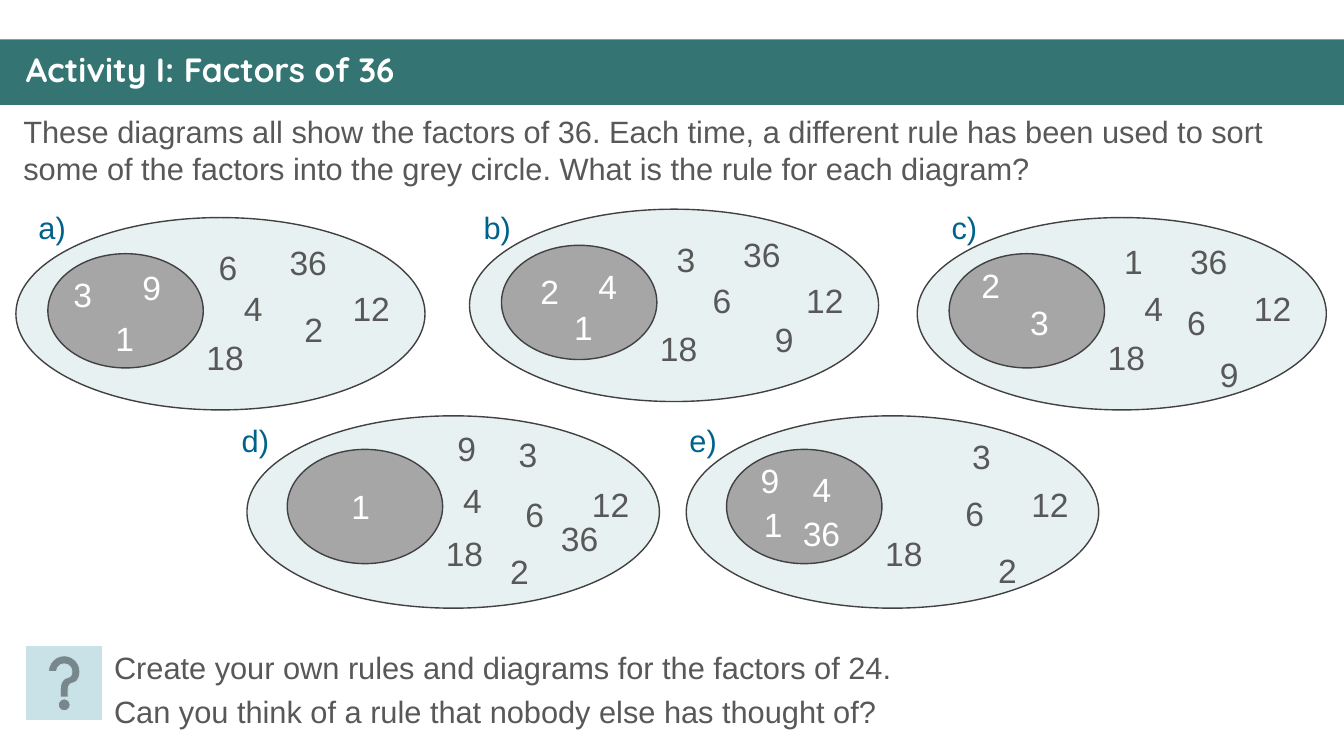
from dataclasses import dataclass, field
from typing import Any

from pptx import Presentation
from pptx.dml.color import RGBColor
from pptx.enum.shapes import MSO_SHAPE as Preset
from pptx.enum.text import MSO_ANCHOR as Anchor, PP_ALIGN as Align
from pptx.util import Inches, Pt

COLUMNS, ROWS = 160, 90
UNIT = Inches(1 / 12)

Spot = tuple[float, float]
Numbers = dict[int, Spot]


@dataclass(frozen=True)
class Theme:
    banner: str = "347574"
    white: str = "FFFFFF"
    ink: str = "585858"
    label: str = "00628C"
    oval: str = "E8F1F1"
    circle: str = "A6A6A6"
    outline: str = "414141"
    help: str = "C8E2E8"
    body_font: str = "Arial"
    title_font: str = "Quicksand"
    large: int = 24
    medium: int = 22
    gap: int = 5


@dataclass(frozen=True)
class Area:
    column: float
    row: float
    columns: float
    rows: float

    def place(self) -> tuple[int, ...]:
        return tuple(round(n * UNIT) for n in (self.column, self.row, self.columns, self.rows))


@dataclass(frozen=True)
class Layout:
    label_row: float
    circle_row: float
    oval_lead: Spot
    oval_columns: float


@dataclass(frozen=True)
class Diagram:
    letter: str
    label_column: float
    circle_column: float
    layout: Layout
    inside: Numbers
    outside: Numbers


@dataclass(frozen=True)
class TextStyle:
    color: str
    size: int
    font: str = field(default=Theme.body_font)
    bold: bool = False
    wrap: bool = True
    align: Align = Align.LEFT
    anchor: Anchor = Anchor.TOP
    line_spacing: float = 1.0


THEME = Theme()
OVAL_ROWS = 22.9
CIRCLE_COLUMNS, CIRCLE_ROWS = 18.5, 13.6
DIGIT_COLUMNS, NUMBER_ROWS = {1: 4.7, 2: 7}, 6
COMMON: Numbers = {12: (35, 3.5), 18: (17.6, 9.3)}

HIGH = Layout(24.2, 30.2, (3.8, 4.3), 48.7)
RAISED = Layout(24.2, 29.2, (3.8, 4.3), 48.7)
LOW = Layout(49.6, 53.5, (4.8, 4), 49.1)

DIAGRAMS = (
    Diagram("a)", 3.4, 5.7, HIGH,
            {1: (6.8, 7), 3: (1.8, 1.8), 9: (10, 1)},
            {2: (29.3, 6), 4: (22.1, 3.5), 6: (19.1, -1.4), 36: (27.5, -2)}),
    Diagram("b)", 56.4, 59.7, RAISED,
            {1: (7.4, 6.7), 2: (3.4, 2.5), 4: (10.3, 1.9)},
            {3: (19.6, -1.3), 6: (23.9, 3.5), 9: (31.3, 8.2), 36: (27.5, -2)}),
    Diagram("c)", 112.1, 113, HIGH,
            {2: (2.6, 0.7), 3: (8.4, 5.2)},
            {1: (19.6, -2.1), 4: (22, 3.5), 6: (27.1, 5.2), 9: (31, 11.4), 36: (27.4, -2.1)}),
    Diagram("d)", 27.6, 34.2, LOW,
            {1: (6.4, 3.8)},
            {2: (25.3, 11.5), 3: (26.3, -2.4), 4: (19.7, 3), 6: (27.1, 4.7),
             9: (19, -3.2), 36: (31.3, 7.6)}),
    Diagram("e)", 80.9, 86.5, LOW,
            {1: (3.2, 5.9), 4: (9, 1.7), 9: (2.8, 0.7), 36: (7.8, 7)},
            {2: (31.1, 11.4), 3: (28, -2.2), 6: (27.2, 4.6)}),
)


def add_preset(shapes: Any, preset: Preset, area: Area, fill: str,
               line: str | None = None, width: float = 1) -> None:
    shape = shapes.add_shape(preset, *area.place())
    shape.shadow.inherit = False
    shape.fill.solid()
    shape.fill.fore_color.rgb = RGBColor.from_string(fill)
    if line is None:
        shape.line.fill.background()
    else:
        shape.line.color.rgb = RGBColor.from_string(line)
        shape.line.width = Pt(width)


def add_text(shapes: Any, area: Area, lines: tuple[str, ...], style: TextStyle) -> None:
    frame = shapes.add_textbox(*area.place()).text_frame
    frame.word_wrap = style.wrap
    frame.vertical_anchor = style.anchor
    for index, line in enumerate(lines):
        para = frame.add_paragraph() if index else frame.paragraphs[0]
        para.text = line
        para.alignment = style.align
        para.line_spacing = style.line_spacing
        para.space_before = Pt(THEME.gap if index else 0)
        para.font.name = style.font
        para.font.size = Pt(style.size)
        para.font.bold = style.bold
        para.font.color.rgb = RGBColor.from_string(style.color)


def add_numbers(shapes: Any, circle: Area, numbers: Numbers, color: str) -> None:
    style = TextStyle(color, THEME.large, wrap=False, align=Align.CENTER)
    for number, (column, row) in numbers.items():
        text = str(number)
        area = Area(circle.column + column, circle.row + row,
                    DIGIT_COLUMNS[len(text)], NUMBER_ROWS)
        add_text(shapes, area, (text,), style)


def add_diagram(page: Any, diagram: Diagram) -> None:
    layout = diagram.layout
    shapes = page.shapes.add_group_shape().shapes
    circle = Area(diagram.circle_column, layout.circle_row, CIRCLE_COLUMNS, CIRCLE_ROWS)
    lead_column, lead_row = layout.oval_lead
    oval = Area(circle.column - lead_column, circle.row - lead_row,
                layout.oval_columns, OVAL_ROWS)
    add_preset(shapes, Preset.OVAL, oval, THEME.oval, THEME.outline)
    add_preset(shapes, Preset.OVAL, circle, THEME.circle, THEME.outline)
    add_numbers(shapes, circle, diagram.inside, THEME.white)
    add_numbers(shapes, circle, diagram.outside | COMMON, THEME.ink)
    add_text(page.shapes, Area(diagram.label_column, layout.label_row, 5.8, 5.6),
             (diagram.letter,), TextStyle(THEME.label, THEME.medium, wrap=False))


def main() -> None:
    deck = Presentation()
    deck.slide_width, deck.slide_height = COLUMNS * UNIT, ROWS * UNIT
    page = deck.slides.add_slide(deck.slide_layouts[6])
    shapes = page.shapes
    body = TextStyle(THEME.ink, THEME.medium)
    title = TextStyle(THEME.white, THEME.large, THEME.title_font, bold=True,
                      anchor=Anchor.MIDDLE, line_spacing=0.9)

    add_preset(shapes, Preset.RECTANGLE, Area(0, 4.7, COLUMNS, 7.8), THEME.banner)
    add_text(shapes, Area(1.9, 5.7, 156.5, 5.6), ("Activity I: Factors of 36",), title)
    add_text(shapes, Area(1.6, 12.8, 155.6, 10.1),
             ("These diagrams all show the factors of 36. Each time, a different rule has been "
              "used to sort some of the factors into the grey circle. What is the rule for "
              "each diagram?",), body)
    for diagram in DIAGRAMS:
        add_diagram(page, diagram)
    add_text(shapes, Area(12.4, 76.6, 118.8, 11),
             ("Create your own rules and diagrams for the factors of 24.",
              "Can you think of a rule that nobody else has thought of?"), body)
    add_preset(shapes, Preset.ACTION_BUTTON_HELP, Area(3.2, 77, 8.9, 8.7),
               THEME.help, THEME.help, 0.5)
    deck.save("out.pptx")


if __name__ == "__main__":
    main()
